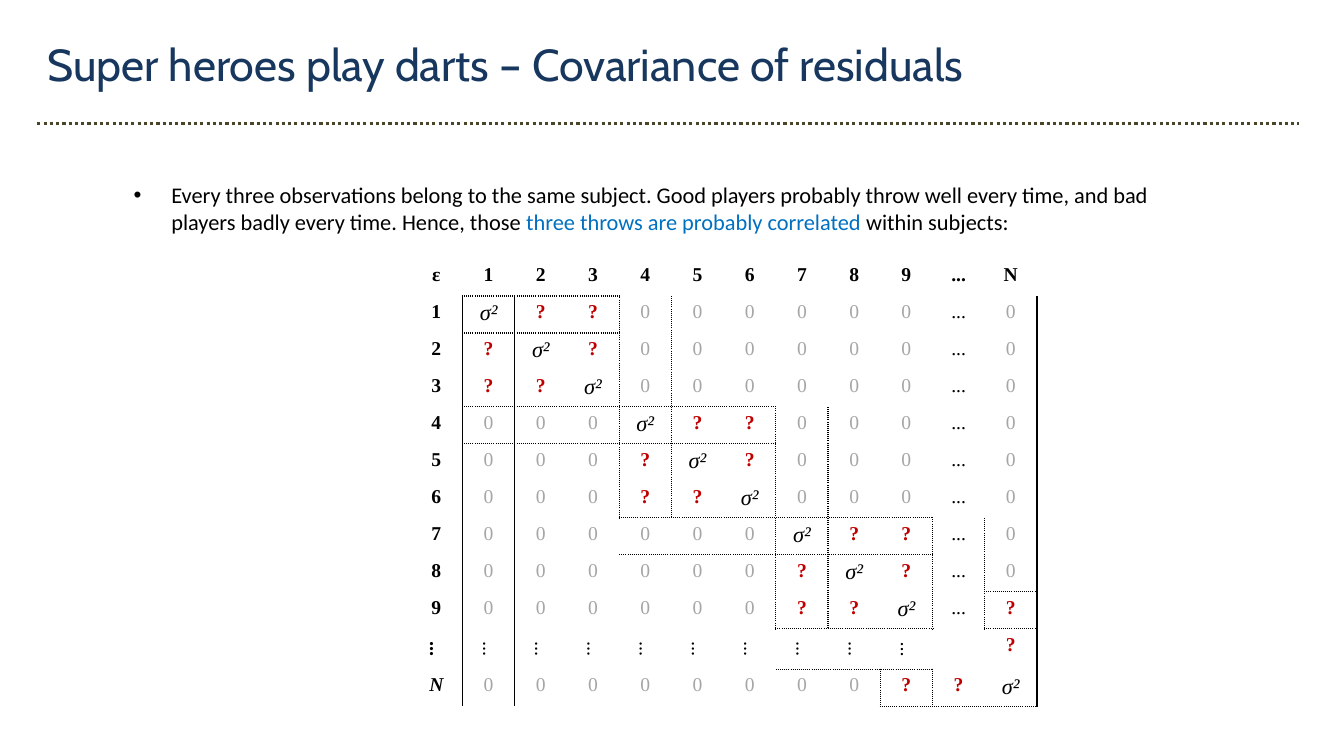
from dataclasses import dataclass
from pptx import Presentation as Deck
from pptx.dml.color import RGBColor as Rgb
from pptx.enum.dml import MSO_LINE_DASH_STYLE as Dash
from pptx.enum.shapes import MSO_CONNECTOR as Link
from pptx.enum.text import PP_ALIGN as Align
from pptx.oxml.ns import qn
from pptx.oxml.xmlchemy import OxmlElement as Node
from pptx.util import Cm, Pt


@dataclass(frozen=True)
class Theme:
    navy: str = "17375E"
    olive: str = "4A452A"
    blue: str = "0070C0"
    black: str = "000000"
    red: str = "C00000"
    gray: str = "A6A6A6"
    head: str = "Cabin"
    body: str = "Calibri"
    math: str = "Times New Roman"
    title: int = 32
    text: int = 16
    sigma: int = 16
    cell: int = 14


THEME = Theme()
HEADS = ["ε", *"123456789", "...", "N"]
SIZE = len(HEADS)
LAST = SIZE - 1
GAP = SIZE - 2
COLS = [(1, 1, 11, "solid"), (4, 1, 6, "sysDot"), (7, 4, 9, "sysDot"),
        (10, 7, 9, "sysDot"), (9, 11, 11, "sysDot"), (12, 1, 11, "solid")]
ROWS = [(1, 1, 3, "sysDot"), (4, 1, 6, "sysDot"), (7, 4, 9, "sysDot"),
        (10, 7, 9, "sysDot"), (9, 11, 11, "sysDot"), (12, 9, 11, "sysDot")]


def style(run, face, size, color, bold=False, slant=False):
    font = run.font
    font.name, font.size = face, Pt(size)
    font.color.rgb = Rgb.from_string(color)
    font.bold, font.italic = bold, slant


def add_text(slide, box):
    frame = slide.shapes.add_textbox(*map(Cm, box)).text_frame
    frame.word_wrap = True
    return frame


def add_title(slide, box):
    frame = add_text(slide, box)
    frame.text = "Super heroes play darts – Covariance of residuals"
    style(frame.paragraphs[0].runs[0], THEME.head, THEME.title, THEME.navy)


def add_rule(slide, box):
    left, top, width, drop = box
    rule = slide.shapes.add_connector(
        Link.STRAIGHT, Cm(left), Cm(top), Cm(left + width), Cm(top + drop))
    rule.line.color.rgb = Rgb.from_string(THEME.olive)
    rule.line.width = Pt(2.25)
    rule.line.dash_style = Dash.ROUND_DOT
    rule._element.spPr.append(Node("a:effectLst"))


def add_body(slide, box):
    para = add_text(slide, box).paragraphs[0]
    parts = [
        ("Every three observations belong to the same subject. Good players "
         "probably throw well every time, and bad players badly every time. "
         "Hence, those ", THEME.black),
        ("three throws are probably correlated", THEME.blue),
        (" within subjects:", THEME.black),
    ]
    for text, color in parts:
        run = para.add_run()
        run.text = text
        style(run, THEME.body, THEME.text, color)
    props = para._p.get_or_add_pPr()
    props.set("marL", str(Cm(0.95)))
    props.set("indent", str(-Cm(0.95)))
    space = Node("a:spcBef")
    share = Node("a:spcPct")
    share.set("val", "20000")
    space.append(share)
    face = Node("a:buFont")
    face.set("typeface", "Arial")
    mark = Node("a:buChar")
    mark.set("char", "•")
    props.extend([space, face, mark])


def value(row, col):
    if row == 0 or col == 0:
        return HEADS[row or col]
    if row == col:
        return "" if row == GAP else "σ²"
    low, high = sorted((row, col))
    if high == LAST:
        return "?" if low >= 9 else "0"
    if high == GAP:
        return "..."
    return "?" if (row - 1) // 3 == (col - 1) // 3 else "0"


def find_edges():
    edges = {}
    for upright, lines in ((True, COLS), (False, ROWS)):
        before, after = ("lnL", "lnR") if upright else ("lnT", "lnB")
        for bound, first, last, dash in lines:
            for step in range(first, last + 1):
                for line, side in ((bound - 1, after), (bound, before),
                                   (bound, after)):
                    if line < SIZE:
                        spot = (step, line) if upright else (line, step)
                        edges.setdefault(spot, {})[side] = dash
    return edges


def add_edge(props, side, dash):
    line = Node(f"a:{side}")
    line.set("w", str(Pt(1)))
    fill = Node("a:solidFill")
    color = Node("a:srgbClr")
    color.set("val", THEME.black)
    fill.append(color)
    kind = Node("a:prstDash")
    kind.set("val", dash)
    line.extend([fill, kind])
    props.append(line)


def fill_cell(cell, row, col, edges):
    text = value(row, col)
    cell.text = text
    para = cell.text_frame.paragraphs[0]
    para.alignment = Align.CENTER
    head = row == 0 or col == 0
    sigma = text == "σ²"
    color = {"?": THEME.red, "0": THEME.gray}.get(text, THEME.black)
    slant = sigma or (row, col) in ((LAST, 0), (GAP, 9))
    for run in para.runs:
        style(run, THEME.math, THEME.sigma if sigma else THEME.cell,
              color, head or text == "?", slant)
    props = cell._tc.get_or_add_tcPr()
    if row == GAP and text == "...":
        props.set("vert", "vert270")
    for side in ("lnL", "lnR", "lnT", "lnB"):
        if side in edges:
            add_edge(props, side, edges[side])
    cell.fill.background()


def add_grid(slide, box):
    left, top, width, height = map(Cm, box)
    table = slide.shapes.add_table(SIZE, SIZE, left, top, width, height).table
    table.first_row = table.horz_banding = False
    look = table._tbl.tblPr.find(qn("a:tableStyleId"))
    look.text = "{2D5ABB26-0587-4C30-8999-92F81FD0307C}"
    for band in table.columns:
        band.width = width // SIZE
    for band in table.rows:
        band.height = height // SIZE
    edges = find_edges()
    for row in range(SIZE):
        for col in range(SIZE):
            fill_cell(table.cell(row, col), row, col,
                      edges.get((row, col), {}))


def main():
    deck = Deck()
    deck.slide_width, deck.slide_height = Cm(33.87), Cm(19.05)
    slide = deck.slides.add_slide(deck.slide_layouts[6])
    add_body(slide, (3.12, 4.45, 27.2, 13.69))
    add_title(slide, (0.94, 0.81, 29.6, 1.63))
    add_rule(slide, (0.94, 3.12, 31.8, 0))
    add_grid(slide, (10.34, 6.53, 15.8, 11.13))
    deck.save("out.pptx")


if __name__ == "__main__":
    main()
